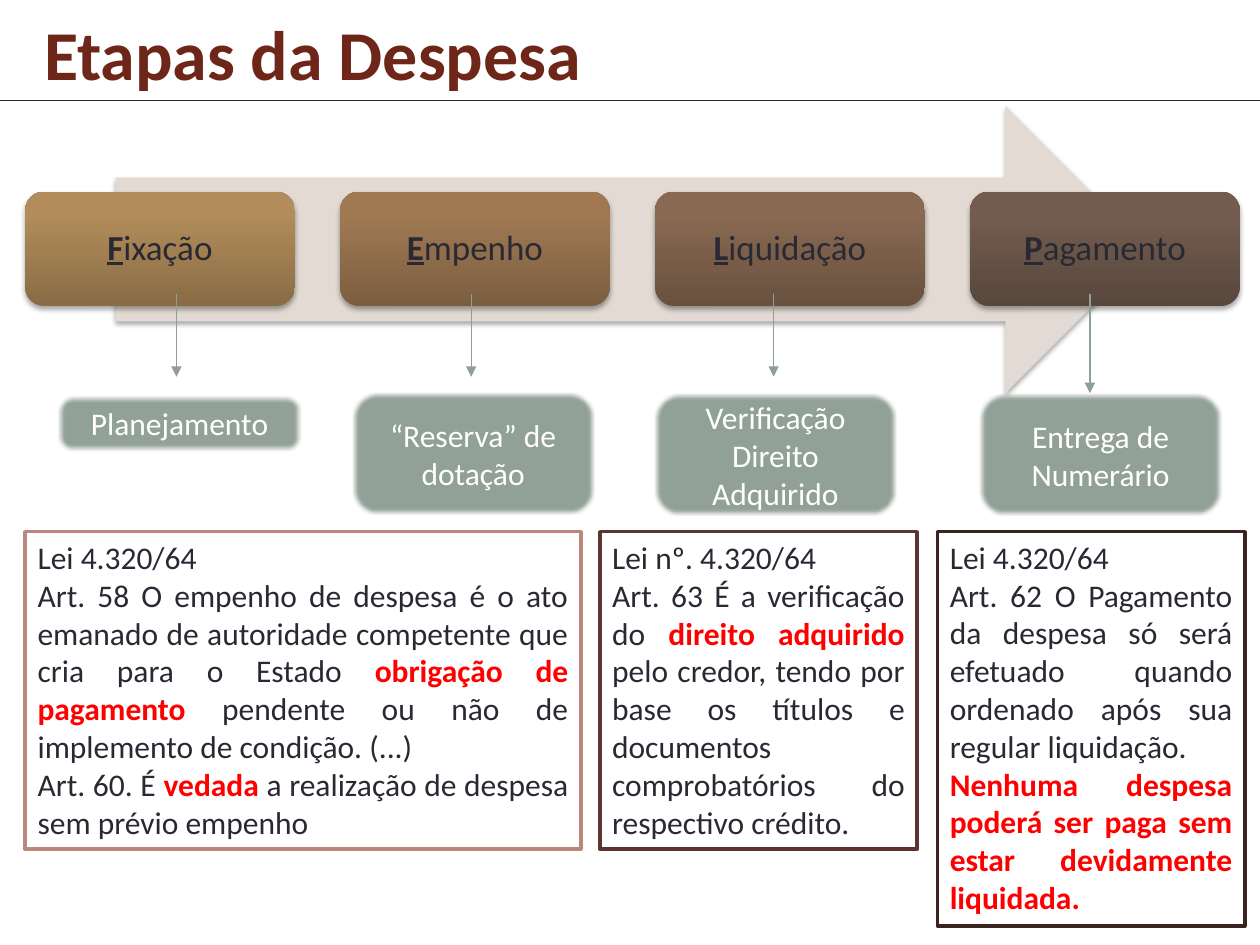
from copy import deepcopy

from lxml.etree import SubElement
from pptx import Presentation
from pptx.dml.color import RGBColor
from pptx.enum.shapes import MSO_CONNECTOR, MSO_SHAPE as Shape
from pptx.enum.text import MSO_ANCHOR as Anchor, MSO_AUTO_SIZE as AutoSize, PP_ALIGN as Align
from pptx.oxml.ns import qn
from pptx.util import Inches, Pt

COLUMNS, ROWS = 100, 75
INK, ACCENT, WHITE, SAGE = "292934", "FF0000", "FFFFFF", "93A299"


def rgb(value):
    return RGBColor.from_string(value)


def write(paragraph, text, size=18, color=INK, bold=False, underline=False):
    """Add one formatted run to a paragraph."""
    run = paragraph.add_run()
    run.text = text
    font = run.font
    font.name, font.size, font.bold, font.underline = "Calibri", Pt(size), bold, underline
    font.color.rgb = rgb(color)


def add_effect(shape, name, **settings):
    shape.shadow.inherit = False
    effects = shape._element.spPr.find(qn("a:effectLst"))
    return SubElement(effects, qn(f"a:{name}"), {key: str(v) for key, v in settings.items()})


def add_soft_shadow(shape):
    shadow = add_effect(shape, "outerShdw", blurRad=Pt(3.1), dist=Pt(1.8),
                        dir=5400000, rotWithShape=0)
    black = SubElement(shadow, qn("a:srgbClr"), val="000000")
    SubElement(black, qn("a:alpha"), val="35000")


class SlideBuilder:
    def __init__(self, presentation):
        self.slide = presentation.slides.add_slide(presentation.slide_layouts[5])
        self.column = presentation.slide_width / COLUMNS
        self.row = presentation.slide_height / ROWS

    def grid(self, left, top, width, height):
        return [round(n * unit) for n, unit in
                zip((left, top, width, height), (self.column, self.row) * 2)]

    def title(self, text, *area):
        title = self.slide.shapes.title
        title.left, title.top, title.width, title.height = self.grid(*area)
        frame = title.text_frame
        frame.word_wrap, frame.auto_size = False, AutoSize.SHAPE_TO_FIT_TEXT
        frame.vertical_anchor = Anchor.TOP
        frame.paragraphs[0].alignment = Align.LEFT
        write(frame.paragraphs[0], text, size=40, color="6E2619", bold=True)

    def shape(self, kind, area, fill=None, line=None):
        shape = self.slide.shapes.add_shape(kind, *self.grid(*area))
        shape.shadow.inherit = False
        if fill:
            shape.fill.solid()
            shape.fill.fore_color.rgb = rgb(fill)
        if line:
            shape.line.color.rgb = rgb(line)
            shape.line.width = Pt(2)
        else:
            shape.line.fill.background()
        shape.text_frame.word_wrap = True
        return shape

    def line(self, x1, y1, x2, y2, color, arrow=False):
        line = self.slide.shapes.add_connector(
            MSO_CONNECTOR.STRAIGHT, *self.grid(x1, y1, x2, y2))
        line.line.color.rgb = rgb(color)
        line.line.width = Pt(0.75)
        properties = line._element.spPr
        if arrow:
            SubElement(properties.find(qn("a:ln")), qn("a:tailEnd"), type="triangle")
        SubElement(properties, qn("a:effectLst"))

    def process_arrow(self, *area):
        add_soft_shadow(self.shape(Shape.RIGHT_ARROW, area, "E3DBD3"))

    def stage(self, name, colors, *area):
        card = self.shape(Shape.ROUNDED_RECTANGLE, area)
        card.fill.gradient()
        card.fill.gradient_angle = 90
        stops = card._element.spPr.find(qn("a:gradFill")).find(qn("a:gsLst"))
        stops.append(deepcopy(stops[-1]))
        for stop, position, color in zip(card.fill.gradient_stops, (0, 0.8, 1), colors):
            stop.position = position
            stop.color.rgb = rgb(color)
        add_soft_shadow(card)
        card.text_frame.vertical_anchor = Anchor.MIDDLE
        label = card.text_frame.paragraphs[0]
        label.alignment, label.line_spacing = Align.CENTER, 0.9
        write(label, name[0], size=20, bold=True, underline=True)
        write(label, name[1:], size=20)

    def meaning(self, text, *area):
        pill = self.shape(Shape.ROUNDED_RECTANGLE, area, SAGE, "6D7871")
        add_effect(pill, "softEdge", rad=Pt(2.5))
        pill.text_frame.vertical_anchor = Anchor.MIDDLE
        label = pill.text_frame.paragraphs[0]
        label.alignment = Align.CENTER
        write(label, text, color=WHITE)

    def law(self, articles, border, *area):
        """Draw a legal quotation; parts between asterisks are emphasised."""
        box = self.shape(Shape.RECTANGLE, area, WHITE, border)
        frame = box.text_frame
        frame.auto_size, frame.vertical_anchor = AutoSize.SHAPE_TO_FIT_TEXT, Anchor.TOP
        for index, article in enumerate(articles):
            paragraph = frame.add_paragraph() if index else frame.paragraphs[0]
            paragraph.alignment = Align.JUSTIFY
            for part, text in enumerate(article.split("*")):
                if text:
                    strong = part % 2 == 1
                    write(paragraph, text, color=ACCENT if strong else INK, bold=strong)


# Stage name, gradient, arrow column and end row, meaning, its left, top and height
STAGES = [
    ("Fixação", ("896C45", "B28C5A", "B48D58"), 14, 29.9,
     "Planejamento", 4.7, 31.5, 4.2),
    ("Empenho", ("7B5E40", "A07953", "A37A51"), 37.4, 29.9,
     "“Reserva” de dotação", 28, 31.2, 9.6),
    ("Liquidação", ("69513F", "896952", "8A6A51"), 61.4, 29.9,
     "Verificação Direito Adquirido", 52, 31.3, 9.6),
    ("Pagamento", ("58473D", "735C4F", "745C4F"), 86.5, 31.2,
     "Entrega de Numerário", 77.8, 31.3, 9.6),
]

# Articles, border colour, left, width and height
LAWS = [
    (["Lei 4.320/64",
      "Art. 58 O empenho de despesa é o ato emanado de autoridade competente que cria "
      "para o Estado *obrigação de pagamento *pendente ou não de implemento de condição. (...)",
      "Art. 60. É *vedada* a realização de despesa sem prévio empenho"],
     "BD867C", 2, 44.1, 25.2),
    (["Lei nº. 4.320/64",
      "Art. 63 É a verificação do *direito adquirido* pelo credor, tendo por base os "
      "títulos e documentos comprobatórios do respectivo crédito."],
     "5B352E", 47.6, 25.2, 25.2),
    (["Lei 4.320/64",
      "Art. 62 O Pagamento da despesa só será efetuado quando ordenado após sua "
      "regular liquidação.",
      "*Nenhuma despesa poderá ser paga sem estar devidamente liquidada.*"],
     "3C231F", 74.4, 24.4, 31.3),
]


def main():
    presentation = Presentation()
    presentation.slide_width, presentation.slide_height = Inches(10), Inches(7.5)
    builder = SlideBuilder(presentation)

    # Heading
    builder.title("Etapas da Despesa", 2.5, 0.3, 45.1, 7.7)
    builder.line(0, 8, COLUMNS, 8, INK)

    # Stages of the expense along the arrow
    builder.process_arrow(9.2, 8.4, 82, 22.8)
    for index, (name, colors, *_) in enumerate(STAGES):
        builder.stage(name, colors, 2 + 25 * index, 15.2, 21.4, 9.1)

    # What each stage means
    for _, _, center, arrow_end, meaning, left, top, height in STAGES:
        builder.line(center, 23.3, center, arrow_end, "8F9F96", arrow=True)
        builder.meaning(meaning, left, top, 19.1, height)

    # Legal basis
    for articles, border, left, width, height in LAWS:
        builder.law(articles, border, left, 42.2, width, height)

    presentation.save("out.pptx")


if __name__ == "__main__":
    main()
